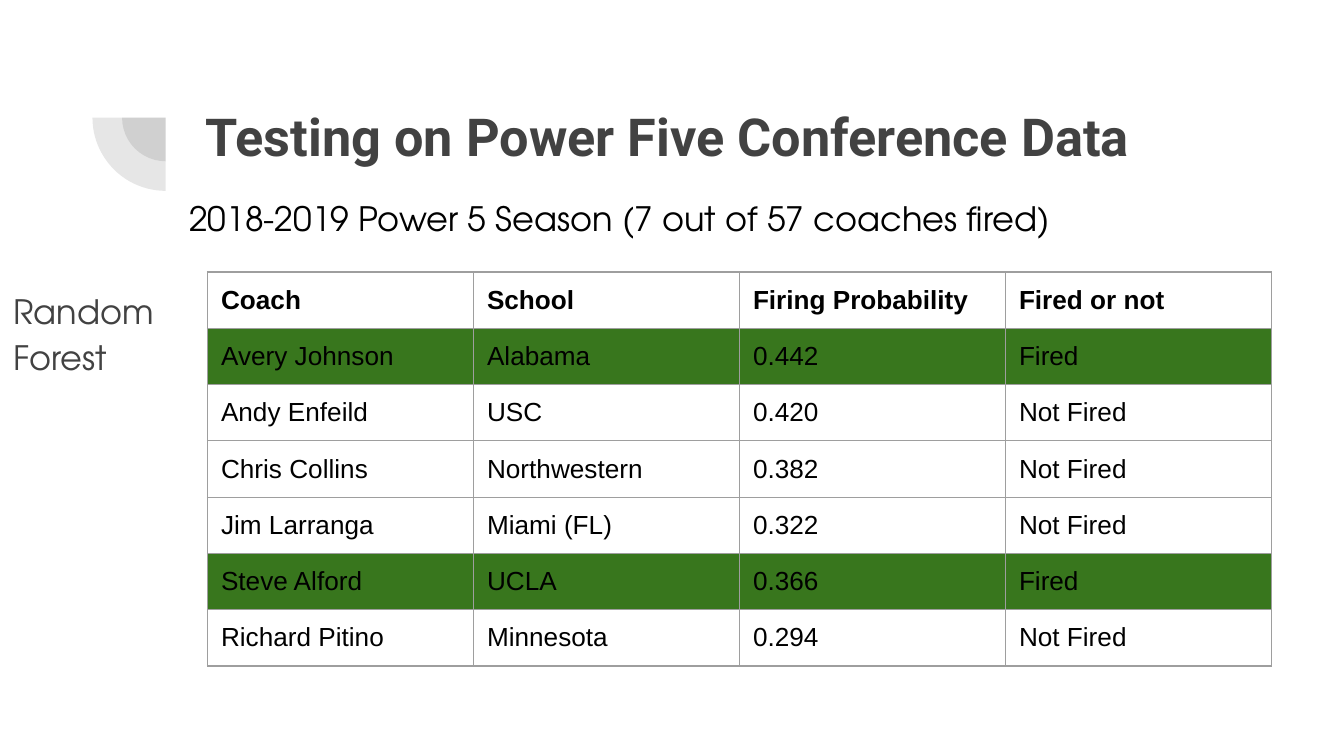
import pptx
import pptx.util
import pptx.dml.color
import pptx.enum.shapes
import pptx.enum.text
import pptx.oxml
import pptx.oxml.ns

Pt = pptx.util.Pt
RGBColor = pptx.dml.color.RGBColor
ANCHOR = pptx.enum.text.MSO_ANCHOR
ALIGN = pptx.enum.text.PP_ALIGN

GRAY = RGBColor(0x42, 0x42, 0x42)
BLACK = RGBColor(0, 0, 0)
GREEN = RGBColor(0x38, 0x76, 0x1D)
BORDER = RGBColor(0x9E, 0x9E, 0x9E)
NS = pptx.oxml.ns.nsdecls("a")
INSET = Pt(7.2)


def add_run(p, text, font, size, color, bold=False):
    r = p.add_run()
    r.text = text
    r.font.name = font
    r.font.size = Pt(size)
    r.font.bold = bold
    r.font.color.rgb = color


def set_frame(sp, left, top, width, height, anchor):
    sp.left, sp.top, sp.width, sp.height = Pt(left), Pt(top), Pt(width), Pt(height)
    tf = sp.text_frame
    tf.word_wrap = True
    tf.auto_size = pptx.enum.text.MSO_AUTO_SIZE.NONE
    tf.vertical_anchor = anchor
    tf.margin_left = tf.margin_right = tf.margin_top = tf.margin_bottom = INSET
    p = tf.paragraphs[0]
    p.alignment = ALIGN.LEFT
    return p


prs = pptx.Presentation()
prs.slide_width, prs.slide_height = Pt(720), Pt(405)
s = prs.slides.add_slide(prs.slide_layouts[1])

center_x, center_y = 88.8, 63
for diameter in (46.8, 78.5):
    sp = s.shapes.add_shape(
        pptx.enum.shapes.MSO_SHAPE.PIE,
        Pt(center_x - diameter / 2), Pt(center_y - diameter / 2),
        Pt(diameter), Pt(diameter))
    sp.adjustments[0] = 108
    sp.adjustments[1] = 162
    sp.rotation = 270
    sp.shadow.inherit = False
    sp.line.fill.background()
    sp.fill.solid()
    sp.fill.fore_color.rgb = GRAY
    clr = sp.fill._xPr.find(".//" + pptx.oxml.ns.qn("a:srgbClr"))
    clr.append(pptx.oxml.parse_xml(f'<a:alpha {NS} val="13000"/>'))

p = set_frame(s.shapes.title, 103, 46.8, 570, 51.8, ANCHOR.MIDDLE)
add_run(p, "Testing on Power Five Conference Data", "Roboto", 28, GRAY, True)

p = set_frame(s.placeholders[1], 0, 145.4, 103, 94.3, ANCHOR.TOP)
p.line_spacing = 1.15
p.space_before = Pt(0)
p.space_after = Pt(16)
pPr = p._p.get_or_add_pPr()
pPr.set("marL", "0")
pPr.set("indent", "0")
pPr.append(pptx.oxml.parse_xml(f"<a:buNone {NS}/>"))
add_run(p, "Random Forest", "TeX Gyre Adventor", 18, GRAY)

rows = [
    ("Coach", "School", "Firing Probability", "Fired or not"),
    ("Avery Johnson", "Alabama", "0.442", "Fired"),
    ("Andy Enfeild", "USC", "0.420", "Not Fired"),
    ("Chris Collins", "Northwestern", "0.382", "Not Fired"),
    ("Jim Larranga", "Miami (FL)", "0.322", "Not Fired"),
    ("Steve Alford", "UCLA", "0.366", "Fired"),
    ("Richard Pitino", "Minnesota", "0.294", "Not Fired"),
]
col_width, row_height = 142.5, 30.1
table = s.shapes.add_table(
    len(rows), len(rows[0]), Pt(111.2), Pt(145.7),
    Pt(col_width * len(rows[0])), Pt(row_height * len(rows))).table
table.first_row = False
table.horz_banding = False
for col in table.columns:
    col.width = Pt(col_width)
for i, values in enumerate(rows):
    table.rows[i].height = Pt(row_height)
    for j, text in enumerate(values):
        cell = table.cell(i, j)
        cell.margin_left = cell.margin_right = INSET
        cell.margin_top = cell.margin_bottom = INSET
        add_run(cell.text_frame.paragraphs[0], text, "Arial", 14, BLACK, i == 0)
        tcPr = cell._tc.get_or_add_tcPr()
        for side in ("lnL", "lnR", "lnT", "lnB"):
            tcPr.append(pptx.oxml.parse_xml(
                f'<a:{side} {NS} w="{Pt(0.75)}"><a:solidFill>'
                f'<a:srgbClr val="{BORDER}"/></a:solidFill></a:{side}>'))
        if values[-1] == "Fired":
            cell.fill.solid()
            cell.fill.fore_color.rgb = GREEN
        else:
            cell.fill.background()

sp = s.shapes.add_textbox(0, 0, 0, 0)
p = set_frame(sp, 94.3, 98.6, 563, 46.8, ANCHOR.TOP)
add_run(p, "2018-2019 Power 5 Season (7 out of 57 coaches fired)",
        "TeX Gyre Adventor", 18, BLACK)

prs.save("out.pptx")
